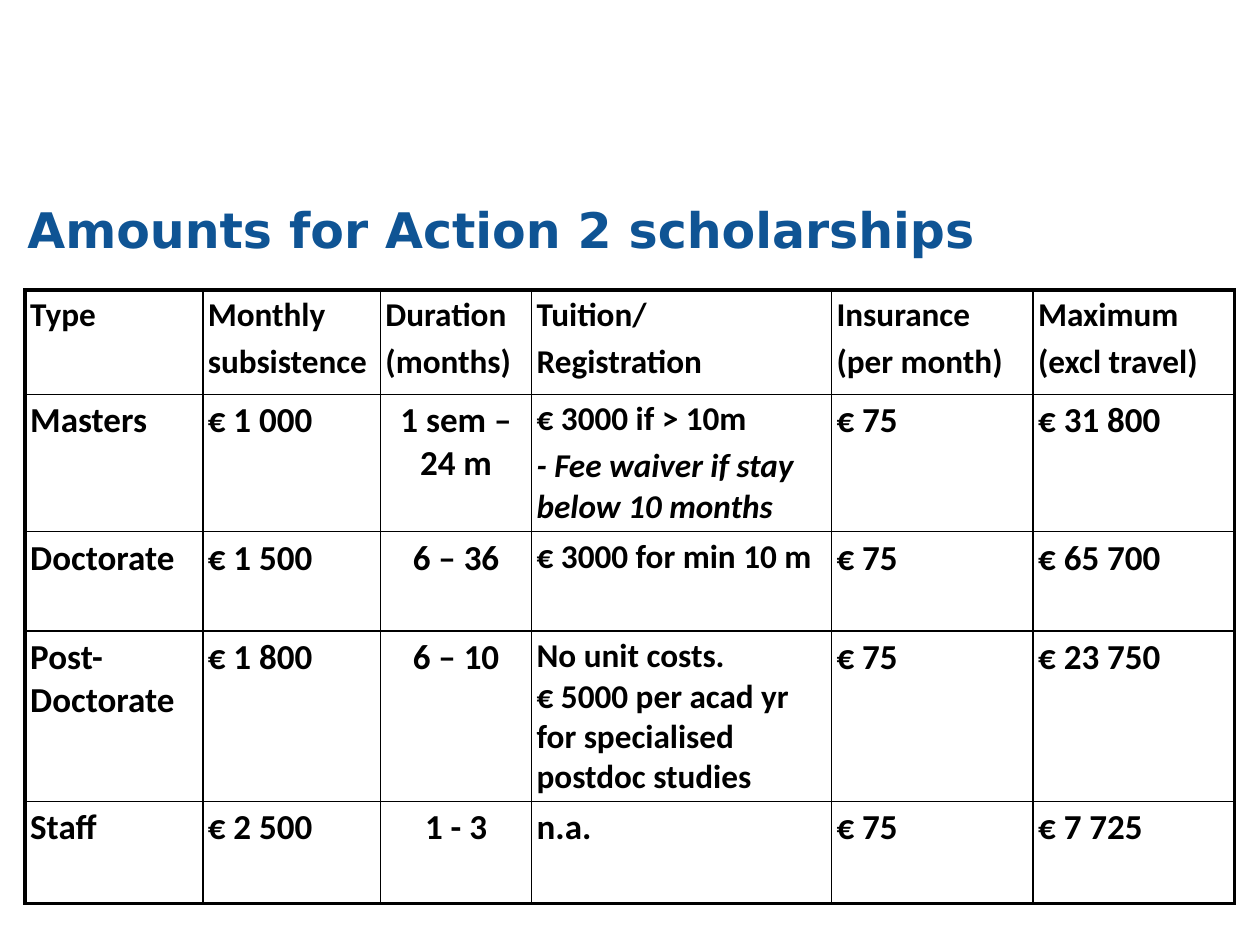
from lxml.etree import SubElement
from pptx import Presentation
from pptx.dml.color import RGBColor
from pptx.enum.text import MSO_ANCHOR, PP_ALIGN
from pptx.oxml.ns import qn
from pptx.util import Inches, Pt

BLACK = "000000"
BLUE = "0F5494"
COLUMN_WIDTHS = [1.41, 1.41, 1.2, 2.38, 1.6, 1.6]
ROW_HEIGHTS = [0.83, 1.09, 0.79, 1.35, 0.81]
DURATION, TUITION = 2, 3
ROWS = [
    ["Type", "Monthly\nsubsistence", "Duration\n(months)",
     "Tuition/\nRegistration", "Insurance\n(per month)", "Maximum\n(excl travel)"],
    ["Masters", "€ 1 000", "1 sem – 24 m",
     "€ 3000 if > 10m\n- Fee waiver if stay below 10 months", "€ 75", "€ 31 800"],
    ["Doctorate", "€ 1 500", "6 – 36", "€ 3000 for min 10 m", "€ 75", "€ 65 700"],
    ["Post-Doctorate", "€ 1 800", "6 – 10",
     "No unit costs.\v€ 5000 per acad yr for specialised postdoc studies",
     "€ 75", "€ 23 750"],
    ["Staff", "€ 2 500", "1 - 3", "n.a.", "€ 75", "€ 7 725"],
]


def color(value):
    return RGBColor.from_string(value)


def write(frame, text, size=20, font="Calibri", fill=BLACK, align=PP_ALIGN.LEFT):
    frame.word_wrap = True
    for index, line in enumerate(text.split("\n")):
        paragraph = frame.add_paragraph() if index else frame.paragraphs[0]
        paragraph.text = line
        paragraph.alignment = align
        if index:
            paragraph.space_before = Pt(size * 0.2)
        for span in paragraph.runs:
            span.font.size = Pt(size)
            span.font.name = font
            span.font.bold = True
            span.font.italic = line.startswith("- ")
            span.font.color.rgb = color(fill)


def set_border(cell, side, width):
    properties = cell._tc.get_or_add_tcPr()
    line = SubElement(properties, qn(f"a:ln{side}"), w=str(Pt(width)))
    solid = SubElement(line, qn("a:solidFill"))
    SubElement(solid, qn("a:srgbClr"), val=BLACK)


def add_title(page, text):
    box = page.shapes.add_textbox(Inches(0.12), Inches(1.31), Inches(9), Inches(1.02))
    box.text_frame.vertical_anchor = MSO_ANCHOR.MIDDLE
    write(box.text_frame, text, size=28, font="DejaVu Sans", fill=BLUE)


def format_cell(cell, row, column):
    cell.margin_left = cell.margin_right = Inches(0.04)
    cell.margin_top = cell.margin_bottom = Inches(0.04)
    outer = {
        "L": column == 0,
        "R": column == len(COLUMN_WIDTHS) - 1,
        "T": row == 0,
        "B": row == len(ROWS) - 1,
    }
    for side, is_outer in outer.items():
        set_border(cell, side, 2.25 if is_outer else 1)
    cell.fill.background()


def add_amounts_table(page):
    table = page.shapes.add_table(
        len(ROWS), len(COLUMN_WIDTHS), Inches(0.2), Inches(2.3),
        Inches(sum(COLUMN_WIDTHS)), Inches(sum(ROW_HEIGHTS))).table
    table.first_row = table.horz_banding = False
    for column, width in zip(table.columns, COLUMN_WIDTHS):
        column.width = Inches(width)
    for row, height in zip(table.rows, ROW_HEIGHTS):
        row.height = Inches(height)
    for row, texts in enumerate(ROWS):
        for column, text in enumerate(texts):
            cell = table.cell(row, column)
            format_cell(cell, row, column)
            small = row == 0 or (column == TUITION and text != "n.a.")
            centred = row > 0 and column == DURATION
            write(cell.text_frame, text, size=19 if small else 20,
                  align=PP_ALIGN.CENTER if centred else PP_ALIGN.LEFT)


def main():
    deck = Presentation()
    deck.slide_width, deck.slide_height = Inches(10), Inches(7.5)
    page = deck.slides.add_slide(deck.slide_layouts[6])
    add_title(page, "Amounts for Action 2 scholarships")
    add_amounts_table(page)
    deck.save("out.pptx")


if __name__ == "__main__":
    main()
